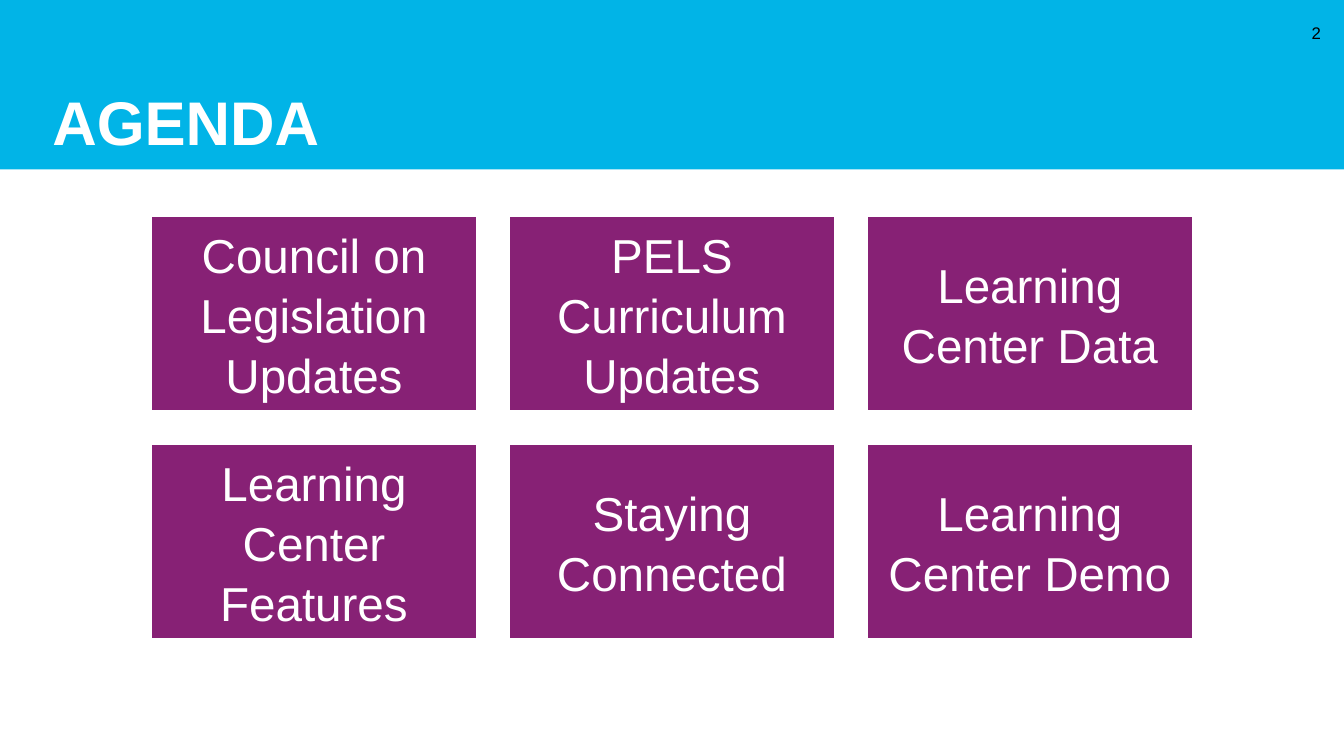
"""Build the agenda slide: a title band above a grid of six topic tiles."""
import pptx
import pptx.dml.color
import pptx.enum.shapes
import pptx.enum.text
import pptx.util

TITLE = "AGENDA"
PAGE_NUMBER = "2"
TOPICS = [
    ["Council on Legislation Updates", "PELS Curriculum Updates", "Learning Center Data"],
    ["Learning Center Features", "Staying Connected", "Learning Center Demo"],
]
COLORS = {"band": "01B4E7", "tile": "872175", "white": "FFFFFF", "black": "000000"}
FONT = "Arial"
PAGE_WIDTH, PAGE_HEIGHT, BAND_HEIGHT = 13.33, 7.5, 1.68
TILE_WIDTH, TILE_HEIGHT, TILE_GAP = 3.23, 1.94, 0.32
GRID_TOP = 2.14

Inches = pptx.util.Inches
ALIGN = pptx.enum.text.PP_ALIGN
ANCHOR = pptx.enum.text.MSO_ANCHOR


def color(name):
    return pptx.dml.color.RGBColor.from_string(COLORS[name])


def add_rectangle(page, place, fill):
    box = page.shapes.add_shape(
        pptx.enum.shapes.MSO_SHAPE.RECTANGLE, *map(Inches, place))
    box.shadow.inherit = False
    box.fill.solid()
    box.fill.fore_color.rgb = color(fill)
    box.line.fill.background()
    return box


def write(box, text, size, ink, align, anchor, insets, spacing=1.0, bold=False):
    frame = box.text_frame
    frame.word_wrap = True
    frame.vertical_anchor = anchor
    frame.margin_left, frame.margin_top, frame.margin_right, frame.margin_bottom = map(
        Inches, insets)
    para = frame.paragraphs[0]
    para.alignment = align
    para.line_spacing = spacing
    span = para.add_run()
    span.text = text
    span.font.name = FONT
    span.font.size = pptx.util.Pt(size)
    span.font.bold = bold
    span.font.color.rgb = color(ink)


def main():
    deck = pptx.Presentation()
    deck.slide_width, deck.slide_height = Inches(PAGE_WIDTH), Inches(PAGE_HEIGHT)
    page = deck.slides.add_slide(deck.slide_layouts[6])

    add_rectangle(page, (0, 0, PAGE_WIDTH, BAND_HEIGHT), "band")
    title = page.shapes.add_textbox(*map(Inches, (0.42, 0, 12.58, BAND_HEIGHT)))
    write(title, TITLE, 44, "white", ALIGN.LEFT, ANCHOR.BOTTOM,
          (0.1, 0, 0.1, 0.1), spacing=0.9, bold=True)
    number = page.shapes.add_textbox(*map(Inches, (12.74, 0.13, 0.46, 0.4)))
    write(number, PAGE_NUMBER, 12, "black", ALIGN.RIGHT, ANCHOR.MIDDLE,
          (0.1, 0.05, 0.1, 0.05))

    columns = len(TOPICS[0])
    grid_width = columns * TILE_WIDTH + (columns - 1) * TILE_GAP
    grid_left = (PAGE_WIDTH - grid_width) / 2
    for row, topics in enumerate(TOPICS):
        for column, topic in enumerate(topics):
            left = grid_left + column * (TILE_WIDTH + TILE_GAP)
            top = GRID_TOP + row * (TILE_HEIGHT + TILE_GAP)
            tile = add_rectangle(page, (left, top, TILE_WIDTH, TILE_HEIGHT), "tile")
            tile.line.color.rgb = color("white")
            tile.line.width = pptx.util.Pt(1.5)
            write(tile, topic, 34, "white", ALIGN.CENTER, ANCHOR.MIDDLE,
                  (0.14, 0.14, 0.14, 0.14), spacing=1.05)

    deck.save("out.pptx")


if __name__ == "__main__":
    main()
